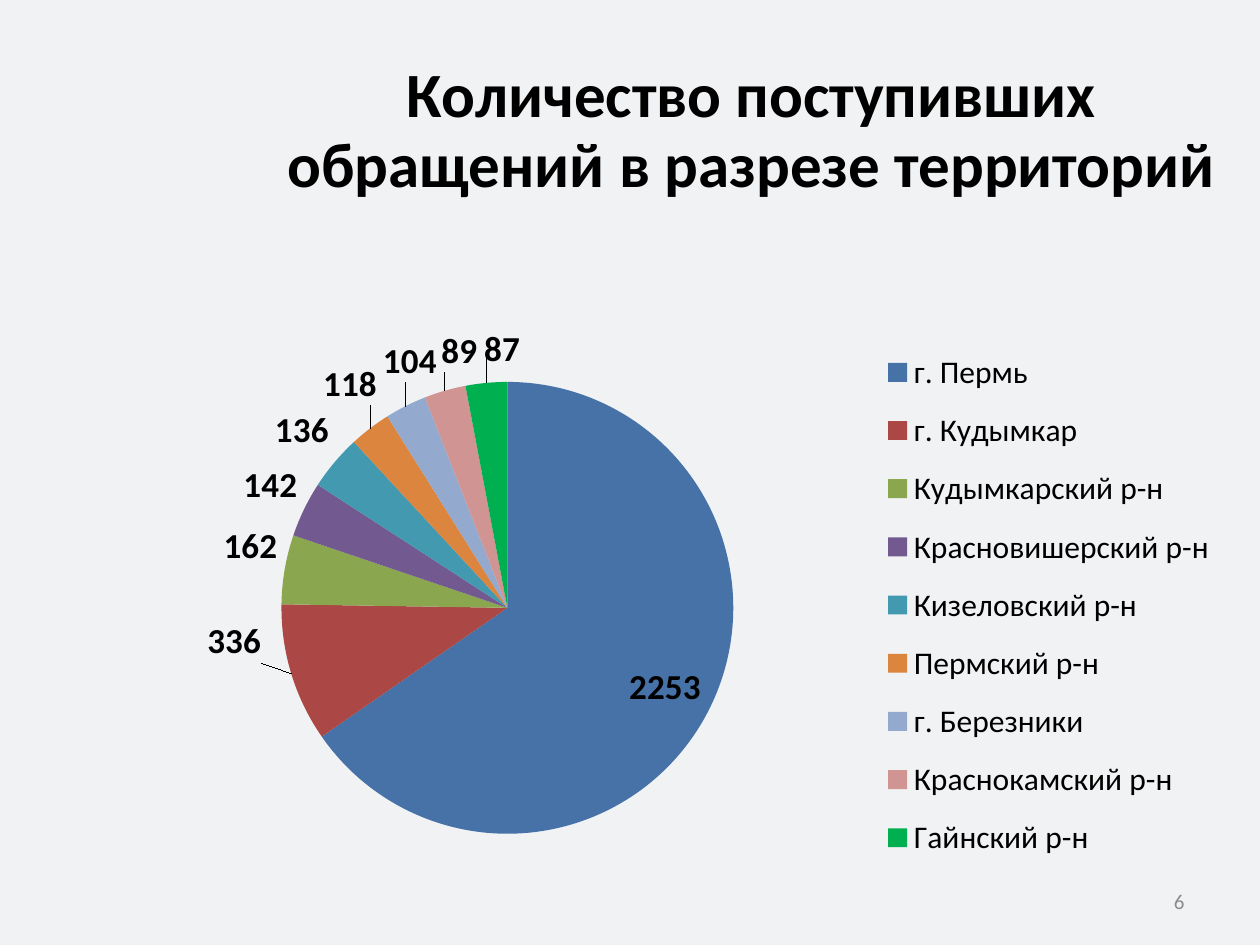
import pptx
import pptx.chart.data
import pptx.dml.color
import pptx.enum.chart
import pptx.enum.text
import pptx.oxml
import pptx.oxml.ns
import pptx.util

Inches, Pt = pptx.util.Inches, pptx.util.Pt
RGB = pptx.dml.color.RGBColor.from_string
PP_ALIGN, ANCHOR = pptx.enum.text.PP_ALIGN, pptx.enum.text.MSO_ANCHOR
POS = pptx.enum.chart.XL_LABEL_POSITION
COLORS = {"back": "F1F2F4", "text": "000000", "number": "8C8C8C"}
TERRITORIES = [
    ("г. Пермь", 66, "2253", "4672A8", None),
    ("г. Кудымкар", 10, "336", "AB4744", (-0.02, -0.1)),
    ("Кудымкарский р-н", 5, "162", "8AA64F", None),
    ("Красновишерский р-н", 4, "142", "725990", None),
    ("Кизеловский р-н", 4, "136", "4299B0", (0, -0.01)),
    ("Пермский р-н", 3, "118", "DC853E", (0.01, -0.03)),
    ("г. Березники", 3, "104", "93A9CE", (0.03, -0.03)),
    ("Краснокамский р-н", 3, "89", "D09493", (0.03, -0.02)),
    ("Гайнский р-н", 3, "87", "00B050", (0.03, -0.03)),
]


def set_font(font, color, **values):
    for name, value in {"name": "Calibri", **values}.items():
        setattr(font, name, value)
    font.color.rgb = RGB(COLORS[color])


def make_layout(**values):
    tags = "".join(f'<c:{tag} val="{val}"/>' for tag, val in values.items())
    return pptx.oxml.parse_xml(
        f'<c:layout {pptx.oxml.ns.nsdecls("c")}><c:manualLayout>{tags}</c:manualLayout></c:layout>')


prs = pptx.Presentation()
prs.slide_width, prs.slide_height = Inches(10), Inches(7.5)
slide = prs.slides.add_slide(prs.slide_layouts[5])
slide.background.fill.solid()
slide.background.fill.fore_color.rgb = RGB(COLORS["back"])

title = slide.shapes.title
title.left, title.top = Inches(2), Inches(0.24)
title.width, title.height = Inches(7.93), Inches(1.59)
number = slide.shapes.add_textbox(Inches(7.17), Inches(6.95), Inches(2.33), Inches(0.4))
for sp, text, align, color, font in [
    (title, "Количество поступивших обращений в разрезе территорий", PP_ALIGN.CENTER, "text",
     {"size": Pt(36), "bold": True}),
    (number, "6", PP_ALIGN.RIGHT, "number", {"size": Pt(12)}),
]:
    tf = sp.text_frame
    tf.word_wrap = True
    tf.vertical_anchor = ANCHOR.MIDDLE
    p = tf.paragraphs[0]
    p.alignment = align
    r = p.add_run()
    r.text = text
    set_font(r.font, color, **font)
title.text_frame.paragraphs[0].line_spacing = Pt(40)

data = pptx.chart.data.CategoryChartData()
data.categories = [name for name, *_ in TERRITORIES]
data.add_series("Series 1", [share for _, share, *_ in TERRITORIES])
chart = slide.shapes.add_chart(
    pptx.enum.chart.XL_CHART_TYPE.PIE, Inches(0.67), Inches(2.6), Inches(9.11), Inches(4.45), data).chart
set_font(chart.font, "text", size=Pt(10))
chart.has_title = False
chart.has_legend = True
legend = chart.legend
legend.position = pptx.enum.chart.XL_LEGEND_POSITION.RIGHT
legend.include_in_layout = False
set_font(legend.font, "text", size=Pt(18))

plot = chart.plots[0]
plot.vary_by_categories = True
series = plot.series[0]
labels = series.data_labels
labels.show_percentage = True
labels.show_value = False
labels.position = POS.OUTSIDE_END
set_font(labels.font, "text", size=Pt(20), bold=True)
for i, (_, _, count, color, _) in enumerate(TERRITORIES):
    point = series.points[i]
    point.format.fill.solid()
    point.format.fill.fore_color.rgb = RGB(color)
    label = point.data_label
    r = label.text_frame.paragraphs[0].add_run()
    r.text = count
    set_font(r.font, "text", size=Pt(20), bold=True)
    label.position = POS.OUTSIDE_END if i else POS.INSIDE_END

for dLbl, (*_, shift) in zip(series._element.xpath(".//c:dLbl"), TERRITORIES):
    if shift:
        dLbl.insert(1, make_layout(x=shift[0], y=shift[1]))
for leader in series._element.xpath(".//c:showLeaderLines"):
    leader.set("val", "1")

for tag, index, layout in [
    ("plotArea", 0, make_layout(layoutTarget="inner", xMode="edge", yMode="edge",
                                x=0.055, y=0.097, w=0.627, h=0.806)),
    ("legend", 1, make_layout(xMode="edge", yMode="edge", x=0.69, y=0.01, w=0.3, h=0.97)),
]:
    area = chart._chartSpace.xpath(f".//c:{tag}")[0]
    for old in area.xpath("c:layout"):
        area.remove(old)
    area.insert(index, layout)

prs.save("out.pptx")
